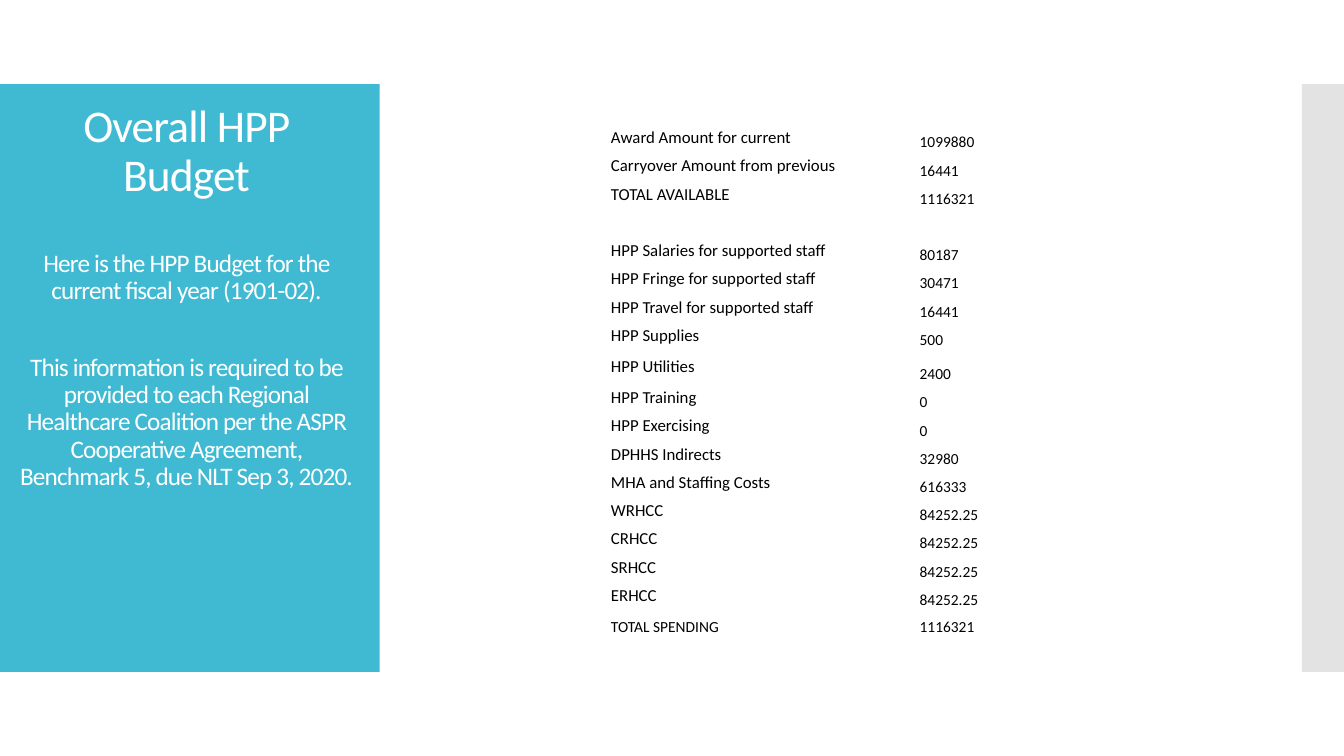
"""Build the overall HPP budget slide on a grid of 160 columns by 90 rows."""
from dataclasses import dataclass

from lxml import etree
from pptx import Presentation
from pptx import util as u
from pptx.dml.color import RGBColor
from pptx.enum import shapes, text
from pptx.oxml.ns import qn

WIDTH, HEIGHT = u.Inches(13.33), u.Inches(7.5)
COLUMNS, ROWS = 160, 90
FONT = "Calibri"
WHITE, BLACK, TEAL, GREY = "FFFFFF", "000000", "40BAD2", "C8C8C8"
LABEL_SIZE, VALUE_SIZE = 12, 11


@dataclass(frozen=True)
class Area:
    left: float
    top: float
    width: float
    height: float

    def box(self) -> tuple[int, int, int, int]:
        return across(self.left), down(self.top), across(self.width), down(self.height)


@dataclass(frozen=True)
class Panel:
    area: Area
    fill: str
    opacity: int = 100


@dataclass(frozen=True)
class Message:
    words: str
    size: float
    gap: float = 0


@dataclass(frozen=True)
class BudgetLine:
    label: str = ""
    value: str = ""
    height: float = 3.36
    label_size: int = LABEL_SIZE
    label_anchor: text.MSO_ANCHOR = text.MSO_ANCHOR.MIDDLE


PANELS = [
    Panel(Area(0, 10, 45.2, 70), TEAL),
    Panel(Area(155, 10, 5, 70), GREY, opacity=50),
]
TITLE_AREA = Area(0.85, 12.25, 42.7, 65.6)
MESSAGES = [
    Message("Overall HPP Budget", 32.4),
    Message("Here is the HPP Budget for the current fiscal year (1901-02).", 18, gap=35.5),
    Message(
        "This information is required to be provided to each Regional Healthcare Coalition "
        "per the ASPR Cooperative Agreement, Benchmark 5, due NLT Sep 3, 2020.",
        18,
        gap=35.5,
    ),
]
TABLE_AREA = Area(71.9, 14.75, 47.1, 61.08)
TABLE_COLUMNS = (36.75, 10.35)
BUDGET = [
    BudgetLine("Award Amount for current", "1099880"),
    BudgetLine("Carryover Amount from previous", "16441"),
    BudgetLine("TOTAL AVAILABLE", "1116321"),
    BudgetLine(),
    BudgetLine("HPP Salaries for supported staff", "80187"),
    BudgetLine("HPP Fringe for supported staff", "30471"),
    BudgetLine("HPP Travel for supported staff", "16441"),
    BudgetLine("HPP Supplies", "500"),
    BudgetLine("HPP Utilities", "2400", height=4.08),
    BudgetLine("HPP Training", "0"),
    BudgetLine("HPP Exercising", "0"),
    BudgetLine("DPHHS Indirects", "32980"),
    BudgetLine("MHA and Staffing Costs", "616333"),
    *(BudgetLine(name, "84252.25") for name in ("WRHCC", "CRHCC", "SRHCC", "ERHCC")),
    BudgetLine("TOTAL SPENDING", "1116321", 3.24, VALUE_SIZE, text.MSO_ANCHOR.BOTTOM),
]


def across(columns: float) -> int:
    return round(WIDTH * columns / COLUMNS)


def down(rows: float) -> int:
    return round(HEIGHT * rows / ROWS)


def colour(value: str) -> RGBColor:
    return RGBColor.from_string(value)


def style(span, size: float, ink: str) -> None:
    span.font.name = FONT
    span.font.size = u.Pt(size)
    span.font.color.rgb = colour(ink)


def draw_panel(page, panel: Panel) -> None:
    box = page.shapes.add_shape(shapes.MSO_SHAPE.RECTANGLE, *panel.area.box())
    box.shadow.inherit = False
    box.fill.solid()
    box.fill.fore_color.rgb = colour(panel.fill)
    box.line.fill.background()
    if panel.opacity < 100:
        tint = box.element.spPr.find(".//" + qn("a:srgbClr"))
        etree.SubElement(tint, qn("a:alpha"), val=str(panel.opacity * 1000))


def draw_messages(page, area: Area, messages: list[Message]) -> None:
    frame = page.shapes.add_textbox(*area.box()).text_frame
    frame.word_wrap = True
    frame.vertical_anchor = text.MSO_ANCHOR.TOP
    frame.margin_top = frame.margin_bottom = 0
    frame.text = "\n".join(message.words for message in messages)
    for para, message in zip(frame.paragraphs, messages):
        para.alignment = text.PP_ALIGN.CENTER
        para.line_spacing = 0.9
        para.space_before = u.Pt(message.gap)
        for span in para.runs:
            style(span, message.size, WHITE)
            span._r.get_or_add_rPr().set("spc", "-60")


def fill_cell(cell, words: str, size: int, anchor: text.MSO_ANCHOR) -> None:
    cell.fill.background()
    cell.margin_left = cell.margin_right = u.Inches(0.07)
    cell.margin_top = cell.margin_bottom = 0
    cell.vertical_anchor = anchor
    para = cell.text_frame.paragraphs[0]
    para.text = words
    for span in para.runs:
        style(span, size, BLACK)
    if not words:
        etree.SubElement(para._p, qn("a:endParaRPr"), sz=str(size * 100))


def draw_budget(page, area: Area, lines: list[BudgetLine]) -> None:
    table = page.shapes.add_table(len(lines), len(TABLE_COLUMNS), *area.box()).table
    table.first_row = table.horz_banding = False
    for column, width in zip(table.columns, TABLE_COLUMNS):
        column.width = across(width)
    for row, line in zip(table.rows, lines):
        row.height = down(line.height)
        label, value = row.cells
        fill_cell(label, line.label, line.label_size, line.label_anchor)
        fill_cell(value, line.value, VALUE_SIZE, text.MSO_ANCHOR.BOTTOM)


def main() -> None:
    deck = Presentation()
    deck.slide_width, deck.slide_height = WIDTH, HEIGHT
    page = deck.slides.add_slide(deck.slide_layouts[6])
    page.background.fill.solid()
    page.background.fill.fore_color.rgb = colour(WHITE)
    for panel in PANELS:
        draw_panel(page, panel)
    draw_messages(page, TITLE_AREA, MESSAGES)
    draw_budget(page, TABLE_AREA, BUDGET)
    deck.save("out.pptx")


if __name__ == "__main__":
    main()
